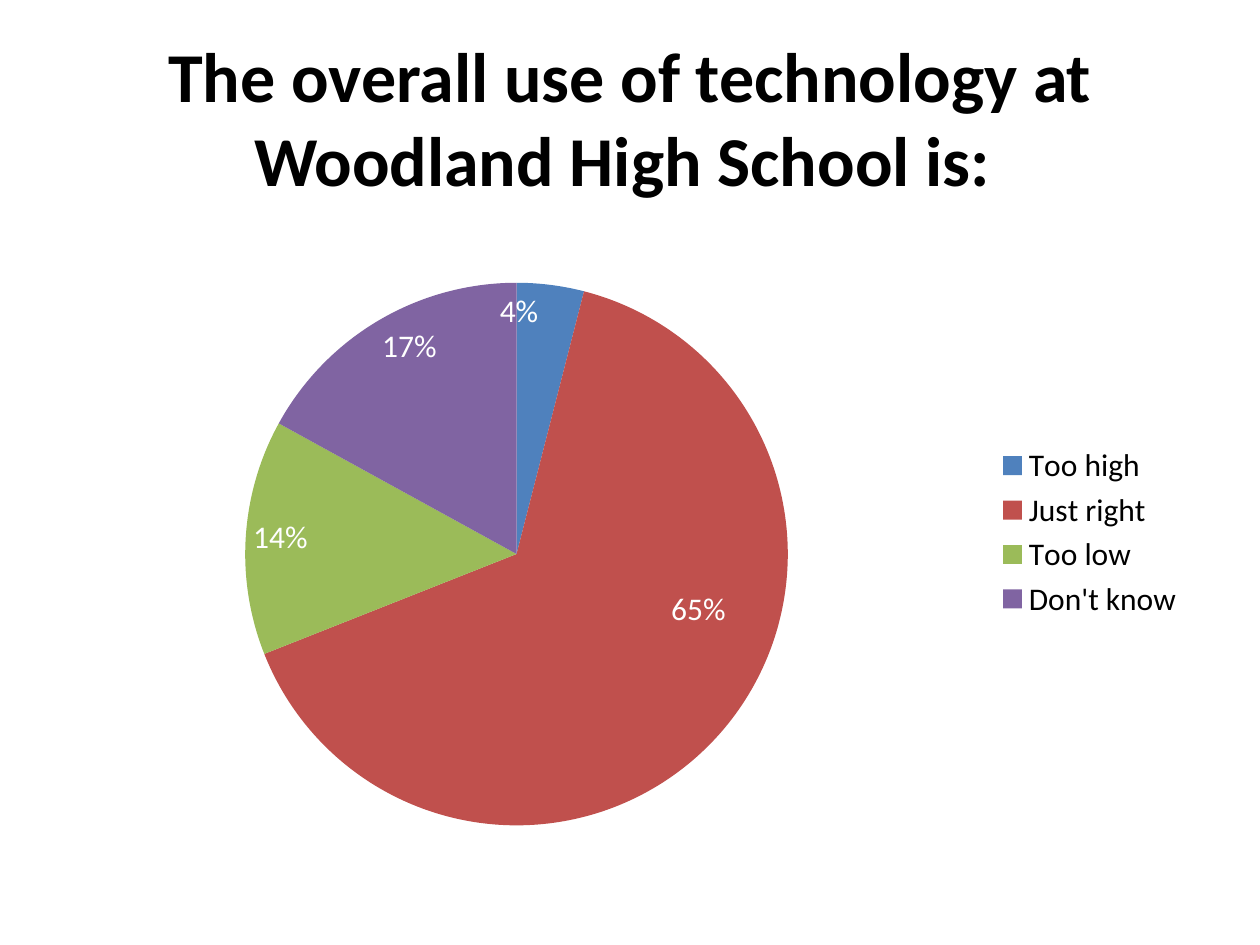
from lxml import etree
from pptx import Presentation, util as u
from pptx.chart import data
from pptx.dml import color
from pptx.enum import chart as charts, text
from pptx.oxml import ns

TITLE = "The overall use of technology at Woodland High School is: "
ANSWERS = [
    ("Too high", 0.04, "4F81BD"),
    ("Just right", 0.65, "C0504D"),
    ("Too low", 0.14, "9BBB59"),
    ("Don't know", 0.17, "8064A2"),
]
LABEL_SHIFTS = {0: {"x": -0.01, "y": 0}, 1: {"x": 0.01, "y": -0.16}}
PIE_AREA = {"x": 0.16, "y": 0.1, "w": 0.48, "h": 0.87}
THEME = {"font": "Calibri", "text": "000000", "label": "FFFFFF",
         "title_size": 40, "chart_size": 18}


def rgb(value):
    return color.RGBColor.from_string(value)


def format_font(font, size, fill, bold=False):
    font.name = THEME["font"]
    font.size = u.Pt(size)
    font.bold = bold
    font.color.rgb = rgb(fill)


def write_text(shape, words, *, size, fill, bold=False):
    frame = shape.text_frame
    frame.word_wrap = True
    frame.vertical_anchor = text.MSO_ANCHOR.MIDDLE
    paragraph = frame.paragraphs[0]
    paragraph.alignment = text.PP_ALIGN.CENTER
    run = paragraph.add_run()
    run.text = words
    format_font(run.font, size, fill, bold)


def add_layout(layout, settings):
    manual = etree.SubElement(layout, ns.qn("c:manualLayout"))
    for name, value in settings.items():
        etree.SubElement(manual, ns.qn(f"c:{name}")).set("val", str(value))


def format_labels(labels):
    labels.position = charts.XL_LABEL_POSITION.INSIDE_END
    format_font(labels.font, THEME["chart_size"], THEME["label"])


def add_pie(slide):
    chart_data = data.CategoryChartData(number_format="0%")
    chart_data.categories = [name for name, _, _ in ANSWERS]
    chart_data.add_series("Series 1", [share for _, share, _ in ANSWERS])
    chart = slide.shapes.add_chart(
        charts.XL_CHART_TYPE.PIE, u.Inches(0.5), u.Inches(1.75),
        u.Inches(9), u.Inches(4.95), chart_data).chart
    format_font(chart.font, THEME["chart_size"], THEME["text"])
    chart.has_title = False
    chart.has_legend = True
    chart.legend.position = charts.XL_LEGEND_POSITION.RIGHT
    chart.legend.include_in_layout = False

    plot = chart.plots[0]
    plot.vary_by_categories = True
    series = plot.series[0]
    labels = series.data_labels
    labels.show_value = True
    labels.number_format = "0%"
    labels.number_format_is_linked = False
    format_labels(labels)
    for index, (_, _, fill) in enumerate(ANSWERS):
        point = series.points[index]
        point.format.fill.solid()
        point.format.fill.fore_color.rgb = rgb(fill)
        if index in LABEL_SHIFTS:
            format_labels(point.data_label)

    root = chart.element if hasattr(chart, "element") else chart._chartSpace
    for label in root.iter(ns.qn("c:dLbl")):
        index = label.find(ns.qn("c:idx"))
        layout = etree.Element(ns.qn("c:layout"))
        index.addnext(layout)
        add_layout(layout, LABEL_SHIFTS[int(index.get("val"))])
    area = root.find(".//" + ns.qn("c:plotArea"))
    layout = area.find(ns.qn("c:layout"))
    if layout is None:
        layout = etree.Element(ns.qn("c:layout"))
        area.insert(0, layout)
    add_layout(layout, {"layoutTarget": "inner", "xMode": "edge",
                        "yMode": "edge", **PIE_AREA})


def main():
    presentation = Presentation()
    presentation.slide_width = u.Inches(10)
    presentation.slide_height = u.Inches(7.5)
    slide = presentation.slides.add_slide(presentation.slide_layouts[5])
    title = slide.shapes.title
    title.left, title.top = u.Inches(0), u.Inches(0.3)
    title.width, title.height = u.Inches(10), u.Inches(1.25)
    write_text(title, TITLE, size=THEME["title_size"], fill=THEME["text"], bold=True)
    add_pie(slide)
    presentation.save("out.pptx")


if __name__ == "__main__":
    main()
